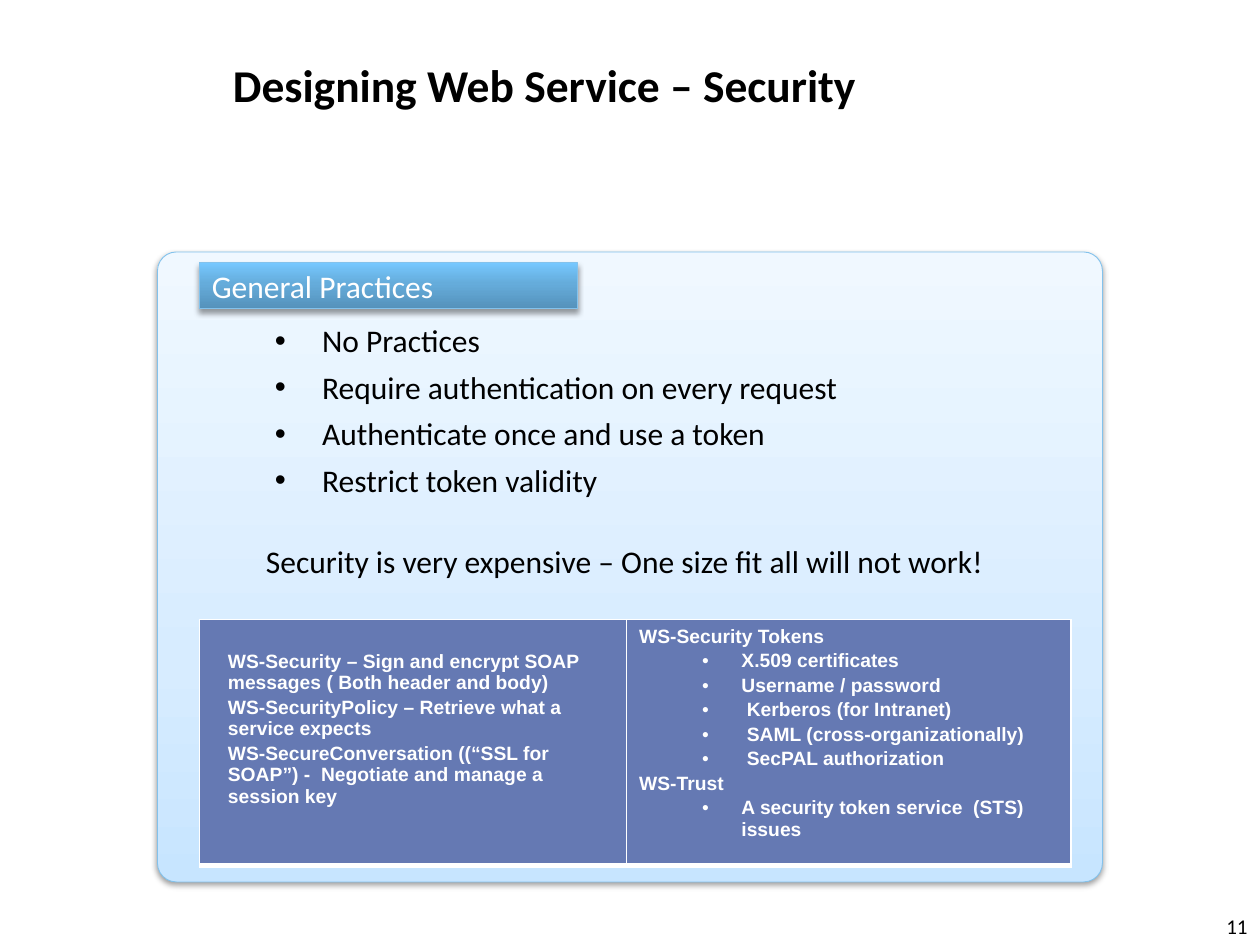
from copy import deepcopy

from lxml import etree
from pptx import Presentation
from pptx import util as u
from pptx.dml.color import RGBColor
from pptx.enum import shapes, text
from pptx.oxml.ns import qn

# Content
TITLE = "Designing Web Service – Security"
HEADING = "General Practices"
PRACTICES = [
    "No Practices",
    "Require authentication on every request",
    "Authenticate once and use a token",
    "Restrict token validity",
]
REMARK = "Security is very expensive – One size fit all will not work!"
PAGE_NUMBER = "11"
STANDARDS = [
    "WS-Security – Sign and encrypt SOAP messages ( Both header and body)",
    "WS-SecurityPolicy – Retrieve what a service expects",
    "WS-SecureConversation ((“SSL for SOAP”) -  Negotiate and manage a session key",
]
TOKEN_GROUPS = [
    ("WS-Security Tokens", ["X.509 certificates", "Username / password",
                            " Kerberos (for Intranet)",
                            " SAML (cross-organizationally)",
                            " SecPAL authorization"]),
    ("WS-Trust", ["A security token service  (STS) issues"]),
]

THEME = {
    "font": "Calibri", "table_font": "Arial",
    "title": 26, "body": 18, "table": 11, "number": 12,
    "ink": "000000", "light": "FFFFFF", "edge": "83C2EC", "cell": "6579B3",
    "panel": [(0, "C7E5FF"), (35, "D7ECFF"), (100, "F0F8FF")],
    "tab": [(0, "5592BB"), (55, "65ACDB"), (100, "76C8FF")],
}
ALIGN, ANCHOR = text.PP_ALIGN, text.MSO_ANCHOR

prs = Presentation()
prs.slide_width, prs.slide_height = u.Pt(720), u.Pt(540)
slide = prs.slides.add_slide(prs.slide_layouts[6])


def style(paragraph, size, color=THEME["ink"], font=THEME["font"], bold=False):
    for run in paragraph.runs:
        run.font.size, run.font.name, run.font.bold = u.Pt(size), font, bold
        run.font.color.rgb = RGBColor.from_string(color)


def indent(paragraph, left, first=0, bullet=False):
    props = paragraph._p.get_or_add_pPr()
    props.set("marL", str(u.Pt(left)))
    props.set("indent", str(u.Pt(first)))
    if bullet:
        etree.SubElement(props, qn("a:buFont"), typeface="Arial")
        etree.SubElement(props, qn("a:buChar"), char="•")
    else:
        etree.SubElement(props, qn("a:buNone"))


def fill_lines(frame, lines):
    frame.text = "\n".join(lines)
    return frame.paragraphs


def add_text(lines, box, size, align=ALIGN.LEFT, anchor=ANCHOR.TOP, bold=False):
    frame = slide.shapes.add_textbox(*map(u.Pt, box)).text_frame
    frame.word_wrap, frame.vertical_anchor = True, anchor
    paragraphs = fill_lines(frame, lines)
    for paragraph in paragraphs:
        paragraph.alignment = align
        style(paragraph, size, bold=bold)
    return paragraphs


def add_plate(kind, box, stops, blur):
    """Shape with an upward gradient, a thin edge and a soft shadow below."""
    plate = slide.shapes.add_shape(kind, *map(u.Pt, box))
    plate.fill.gradient()
    plate.fill.gradient_angle = 90
    stop_list = plate._element.spPr.find(".//" + qn("a:gsLst"))
    stop_list.append(deepcopy(stop_list[-1]))
    for stop, (position, color) in zip(plate.fill.gradient_stops, stops):
        stop.position = position / 100
        stop.color.rgb = RGBColor.from_string(color)
    plate.line.color.rgb = RGBColor.from_string(THEME["edge"])
    plate.line.width = u.Pt(0.5)
    plate.shadow.inherit = False
    effects = plate._element.spPr.find(qn("a:effectLst"))
    shadow = etree.SubElement(effects, qn("a:outerShdw"), blurRad=str(u.Pt(blur)),
                              dist=str(u.Pt(2)), dir="5400000", rotWithShape="0")
    shade = etree.SubElement(shadow, qn("a:srgbClr"), val="000000")
    etree.SubElement(shade, qn("a:alpha"), val="38000")
    return plate


def set_borders(cell):
    props = cell._tc.get_or_add_tcPr()
    for place, (side, width) in enumerate([("L", 1), ("R", 1), ("T", 1), ("B", 3)]):
        line = etree.Element(qn("a:ln" + side), w=str(u.Pt(width)))
        paint = etree.SubElement(line, qn("a:solidFill"))
        etree.SubElement(paint, qn("a:srgbClr"), val=THEME["light"])
        props.insert(place, line)


# Panel and title
panel = add_plate(shapes.MSO_SHAPE.ROUNDED_RECTANGLE, (90, 144, 540, 360),
                  THEME["panel"], 3.5)
panel.adjustments[0] = 0.03
add_text([TITLE], (126, 3, 594, 90), THEME["title"], anchor=ANCHOR.MIDDLE, bold=True)

# Practices and remark
practices = add_text(PRACTICES, (150, 180, 426, 132), THEME["body"], ALIGN.JUSTIFY)
for i, practice in enumerate(practices):
    indent(practice, 27, -27, bullet=True)
    practice.space_before = u.Pt(2.5 if i else 0)
    practice.space_after = u.Pt(2.5)
add_text([REMARK], (120, 306, 474, 29), THEME["body"], ALIGN.CENTER)
add_text([PAGE_NUMBER], (552, 502.5, 168, 37.5), THEME["number"],
         ALIGN.RIGHT, ANCHOR.BOTTOM)

# Heading tab
tab = add_plate(shapes.MSO_SHAPE.RECTANGLE, (114, 150, 216, 26.5), THEME["tab"], 3)
tab.text_frame.text = HEADING
tab.text_frame.vertical_anchor = ANCHOR.MIDDLE
tab.text_frame.paragraphs[0].alignment = ALIGN.LEFT
style(tab.text_frame.paragraphs[0], THEME["body"], THEME["light"])

# Standards table: (line, left indent, first-line indent, bullet)
standard_rows = [(line, 9, 0, False) for line in STANDARDS]
token_rows = []
for group, tokens in TOKEN_GROUPS:
    token_rows.append((group, 27, -27, False))
    token_rows += [(token, 58.5, -22.5, True) for token in tokens]

table = slide.shapes.add_table(1, 2, u.Pt(114), u.Pt(354), u.Pt(498), u.Pt(140.5)).table
table.first_row = table.horz_banding = False
columns = [(244, 18, standard_rows), (254, 3.6, token_rows)]
for column, (width, top, rows) in enumerate(columns):
    table.columns[column].width = u.Pt(width)
    cell = table.cell(0, column)
    cell.margin_top = u.Pt(top)
    cell.fill.solid()
    cell.fill.fore_color.rgb = RGBColor.from_string(THEME["cell"])
    set_borders(cell)
    paragraphs = fill_lines(cell.text_frame, [row[0] for row in rows])
    for i, (paragraph, row) in enumerate(zip(paragraphs, rows)):
        indent(paragraph, *row[1:])
        paragraph.space_before = u.Pt(1.75 if i else 0)
        style(paragraph, THEME["table"], THEME["light"], THEME["table_font"], True)

prs.save("out.pptx")
